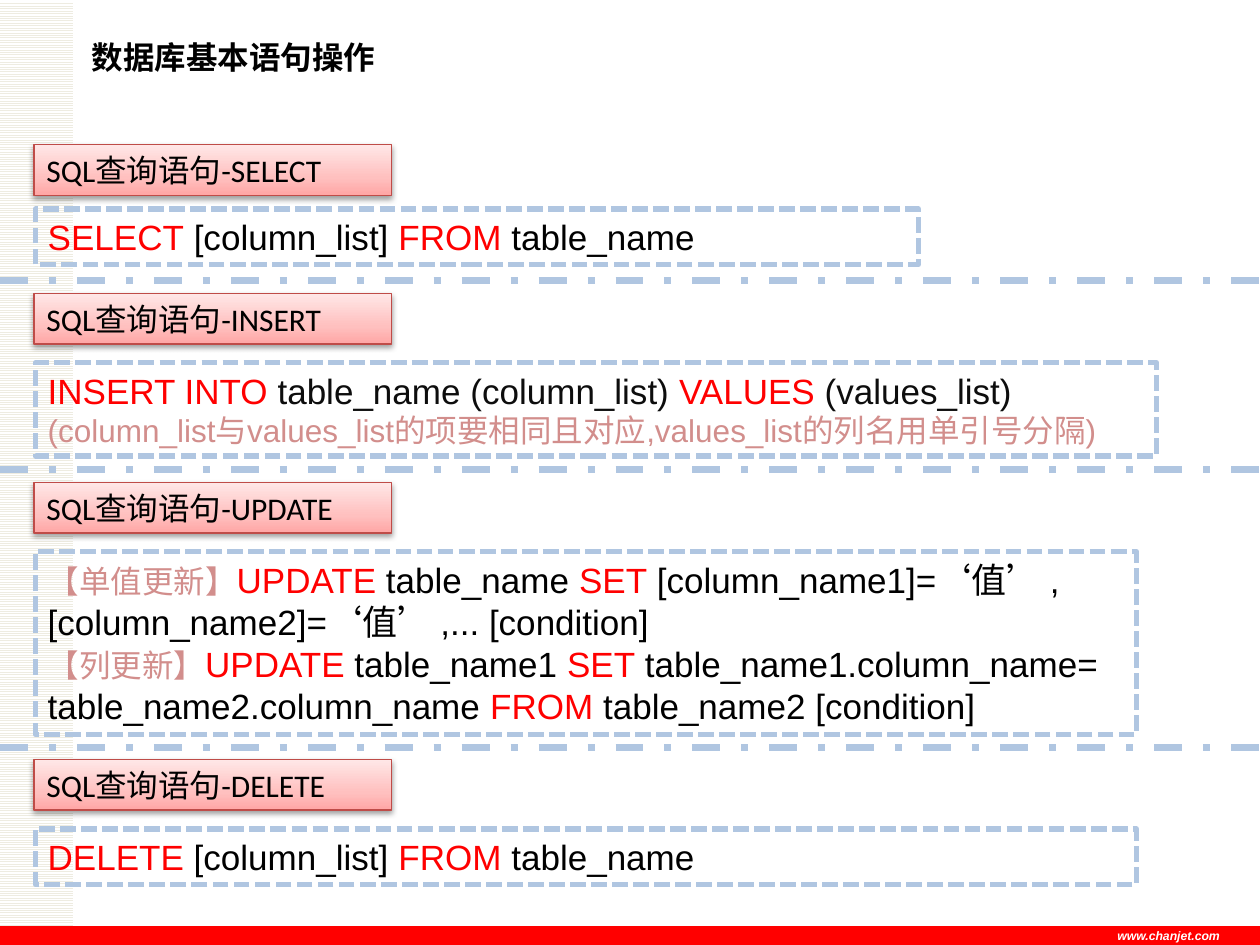
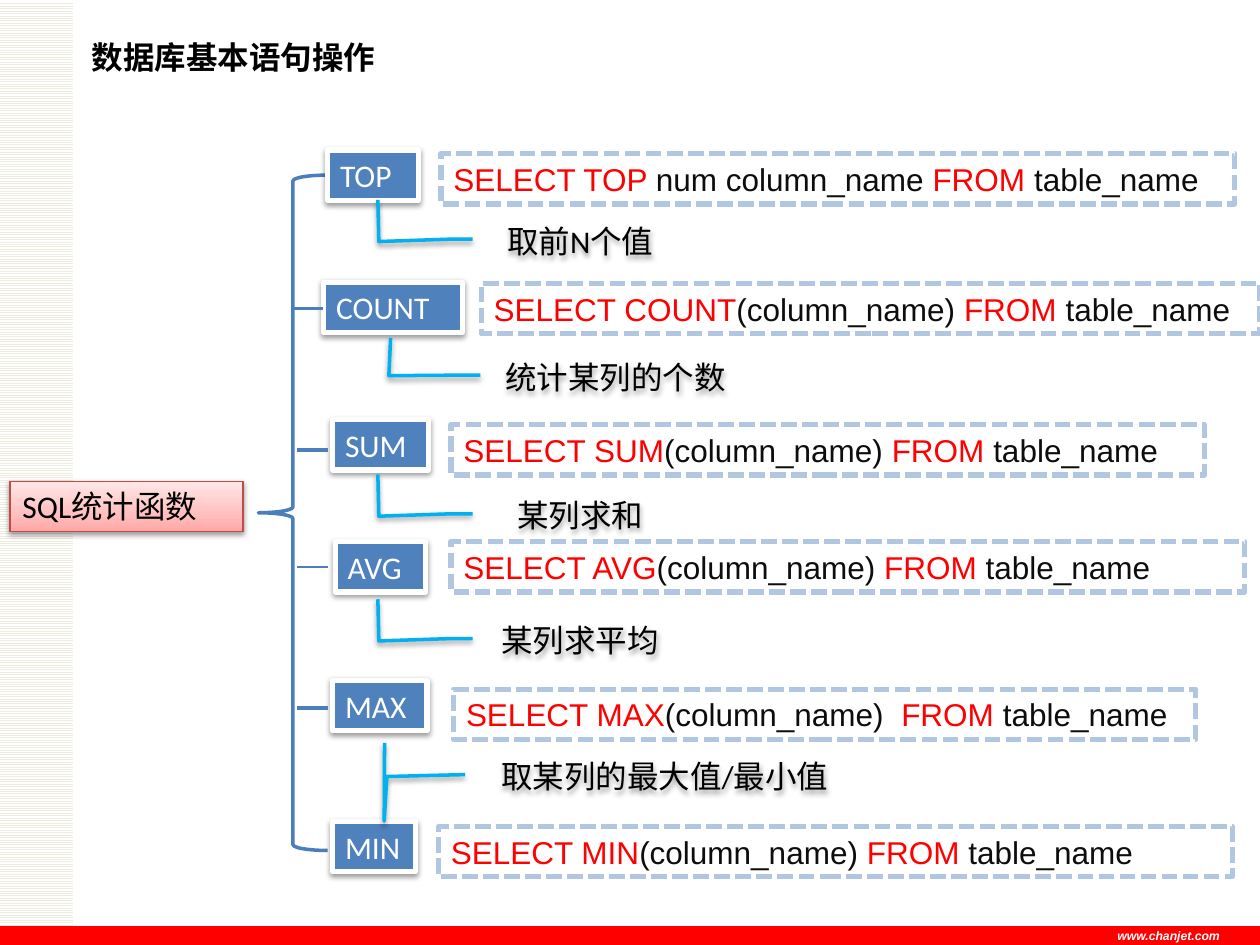
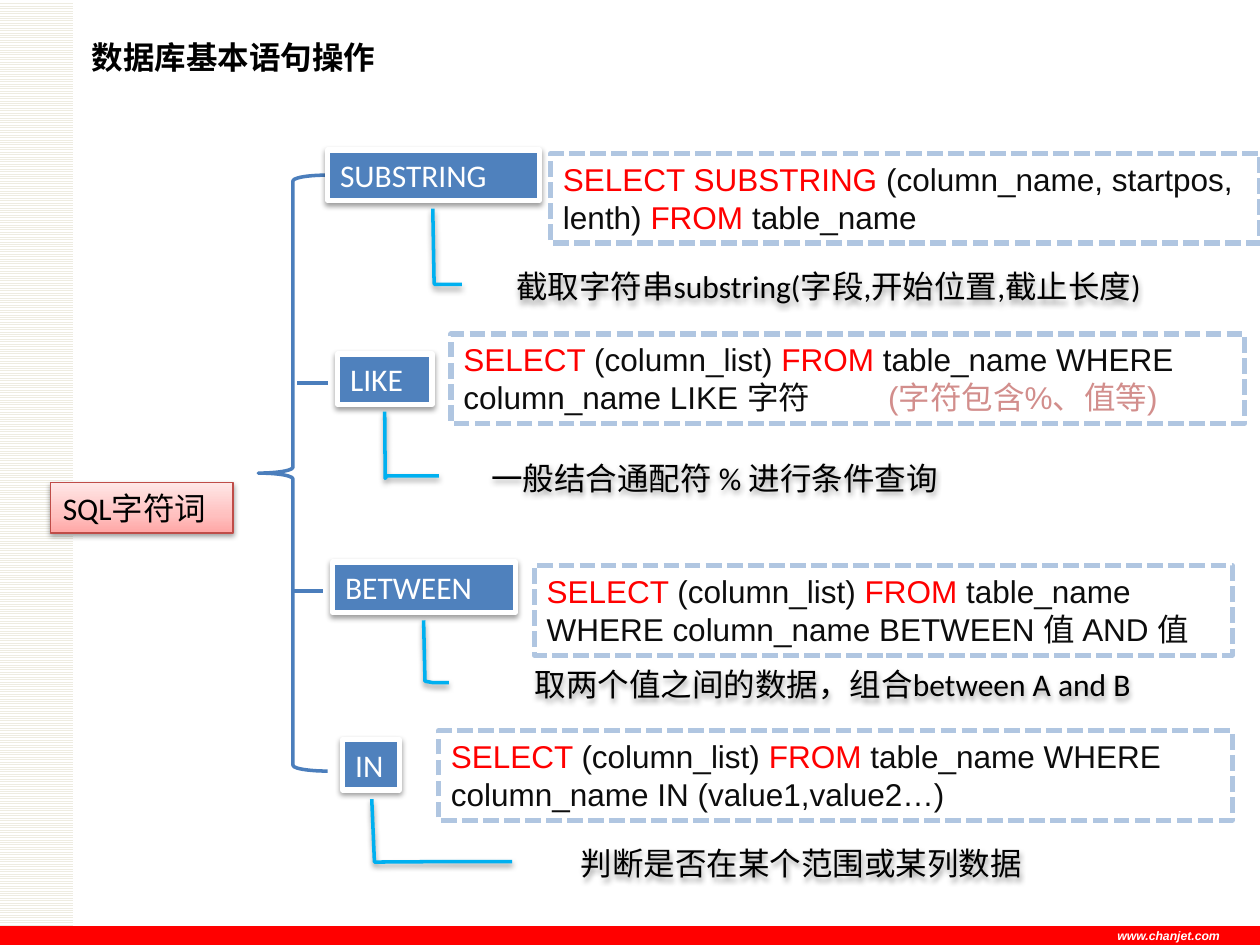
from collections import namedtuple
from copy import deepcopy

from pptx import Presentation
from pptx.dml.color import RGBColor
from pptx.enum.dml import MSO_LINE, MSO_PATTERN
from pptx.enum.shapes import MSO_CONNECTOR, MSO_SHAPE
from pptx.enum.text import MSO_ANCHOR, MSO_AUTO_SIZE, PP_ALIGN
from pptx.oxml import parse_xml
from pptx.oxml.ns import nsdecls, qn
from pptx.util import Inches, Pt

# Colours
BLACK = RGBColor(0x00, 0x00, 0x00)
WHITE = RGBColor(0xFF, 0xFF, 0xFF)
INK = RGBColor(0x0D, 0x0D, 0x0D)
RED = RGBColor(0xFF, 0x00, 0x00)
ROSE = RGBColor(0xD2, 0x8E, 0x8C)
CREAM = RGBColor(0xEE, 0xEC, 0xE1)
PALE_BLUE = RGBColor(0xB0, 0xC6, 0xE1)
BLUE = RGBColor(0x4F, 0x81, 0xBD)
BRACE_BLUE = RGBColor(0x4B, 0x7E, 0xBC)
SKY = RGBColor(0x00, 0xB0, 0xF0)
BRICK = RGBColor(0xBF, 0x4C, 0x48)
PINK_STOPS = [(0, RGBColor(0xFF, 0xA6, 0xA5)), (0.35, RGBColor(0xFF, 0xC0, 0xBF)),
              (1, RGBColor(0xFF, 0xE7, 0xE7))]

# Sizes in inches
BOX_HEIGHT = {1: 0.4, 2: 0.71}
NOTE_HEIGHT = 0.38
BRACE_LEFT, BRACE_TOP, BRACE_WIDTH = 2.05, 1.39, 0.55
TICK_LENGTH = 0.24

TITLE = "数据库基本语句操作"
SITE = "www.chanjet.com"

# Statements: each paragraph is a list of (text, colour)
Section = namedtuple("Section", "heading top box_top box_width box_height paragraphs")
SECTIONS = [
    Section("SQL查询语句-SELECT", 1.15, 1.66, 7.01, 0.44, [
        [("SELECT", RED), (" [column_list] ", BLACK), ("FROM ", RED), ("table_name", BLACK)]]),
    Section("SQL查询语句-INSERT", 2.33, 2.88, 8.9, 0.74, [
        [("INSERT INTO ", RED), ("table_name (column_list) ", INK),
         ("VALUES ", RED), ("(values_list)", INK)],
        [("(column_list与values_list的项要相同且对应,values_list的列名用单引号分隔)", ROSE)]]),
    Section("SQL查询语句-UPDATE", 3.83, 4.38, 8.74, 1.45, [
        [("【单值更新】", ROSE), ("UPDATE", RED), (" table_name ", BLACK), ("SET", RED),
         (" [column_name1]=‘值’ , [column_name2]=‘值’ ,... [condition]", BLACK)],
        [("【列更新】", ROSE), ("UPDATE", RED), (" table_name1 ", BLACK), ("SET", RED),
         (" table_name1.column_name=", BLACK)],
        [("table_name2.column_name ", BLACK), ("FROM", RED),
         (" table_name2 [condition]", BLACK)]]),
    Section("SQL查询语句-DELETE", 6.03, 6.58, 8.74, 0.44, [
        [("DELETE", RED), (" [column_list] ", BLACK), ("FROM", RED), (" table_name", BLACK)]]),
]


def select(keyword, columns, rest="table_name"):
    return [(f"SELECT {keyword}", RED), (columns, INK), ("FROM ", RED), (rest, INK)]


# Trees: keyword and statement are (left, top, width); tick is (left, top, points)
Branch = namedtuple("Branch", "name keyword statement lines runs tick")
Note = namedtuple("Note", "text left top width bends")
NOTE_START = (0.468, -0.044)
SHORT_BENDS = (0.468, -0.147, 0.519, -0.518, -0.354, -0.523)

FUNCTIONS = dict(
    root=("SQL统计函数", 0.08, 3.82, 1.85),
    brace_height=5.36,
    branches=[
        Branch("TOP", (2.6, 1.19, 0.72), (3.5, 1.22, 6.3), 1,
               select("TOP ", "num column_name "), None),
        Branch("COUNT", (2.57, 2.24, 1.1), (3.82, 2.25, 6.18), 1,
               select("COUNT", "(column_name) "), (2.32, 2.45, 2)),
        Branch("SUM", (2.64, 3.33, 0.76), (3.58, 3.37, 5.98), 1,
               select("SUM", "(column_name) "), (2.36, 3.57, 2)),
        Branch("AVG", (2.66, 4.3, 0.72), (3.58, 4.3, 6.3), 1,
               select("AVG", "(column_name) "), (2.36, 4.5, 1.5)),
        Branch("MAX", (2.64, 5.4, 0.75), (3.6, 5.47, 5.89), 1,
               select("MAX", "(column_name)  "), (2.36, 5.62, 2)),
        Branch("MIN", (2.64, 6.52, 0.66), (3.48, 6.56, 6.3), 1,
               select("MIN", "(column_name) "), None),
    ],
    notes=[
        Note("取前N个值", 3.82, 1.72, 1.57, SHORT_BENDS),
        Note("统计某列的个数", 3.9, 2.8, 1.97, (0.468, -0.147, 0.479, -0.413, -0.314, -0.406)),
        Note("某列求和", 3.82, 3.9, 1.57, SHORT_BENDS),
        Note("某列求平均", 3.82, 4.89, 1.57, SHORT_BENDS),
        Note("取某列的最大值/最小值", 3.82, 5.97, 2.91,
             (0.508, -0.258, 1.441, -0.265, -0.194, -0.264)),
    ],
)

LIKE_TAB = 3.37
OPERATORS = dict(
    root=("SQL字符词", 0.4, 3.83, 1.45),
    brace_height=4.73,
    branches=[
        Branch("SUBSTRING", (2.6, 1.19, 1.68), (4.37, 1.22, 5.63), 2,
               select("SUBSTRING ", "(column_name, startpos, lenth) "), None),
        Branch("LIKE", (2.68, 2.81, 0.75), (3.58, 2.65, 6.3), 2,
               select("", "(column_list) ", "table_name WHERE column_name LIKE 字符\t")
               + [("(字符包含%、值等)", ROSE)], (2.36, 3.04, 2)),
        Branch("BETWEEN", (2.64, 4.46, 1.45), (4.24, 4.49, 5.54), 2,
               select("", "(column_list) ", "table_name WHERE column_name BETWEEN 值 AND 值"),
               (2.32, 4.69, 2)),
        Branch("IN", (2.72, 5.87, 0.45), (3.48, 5.8, 6.3), 2,
               select("", "(column_list) ", "table_name WHERE column_name IN (value1,value2…)"),
               None),
    ],
    notes=[
        Note("截取字符串substring(字段,开始位置,截止长度)", 3.9, 2.08, 5.35,
             (0.468, -0.084, 0.439, -0.085, -1.116, -0.087)),
        Note("一般结合通配符 % 进行条件查询", 3.66, 3.6, 4.02,
             (0.468, -0.147, 0.519, -0.15, -0.876, -0.151)),
        Note("取两个值之间的数据，组合between A and B", 3.81, 5.24, 5.6,
             (0.468, -0.067, 0.438, -0.078, -0.836, -0.08)),
        Note("判断是否在某个范围或某列数据", 4.25, 6.66, 4.22,
             (0.468, -0.147, 0.479, -0.303, -0.836, -0.308)),
    ],
)


# Drawing helpers
def add_plain_shape(slide, kind, left, top, width, height, line=None, points=1):
    shape = slide.shapes.add_shape(kind, Inches(left), Inches(top), Inches(width), Inches(height))
    shape.shadow.inherit = False
    shape.fill.background()
    if line is None:
        shape.line.fill.background()
    else:
        shape.line.color.rgb = line
        shape.line.width = Pt(points)
    return shape


def add_shadow(shape):
    shape._element.spPr.find(qn("a:effectLst")).append(parse_xml(
        f'<a:outerShdw {nsdecls("a")} blurRad="40000" dist="20000" dir="5400000" rotWithShape="0">'
        '<a:srgbClr val="000000"><a:alpha val="38000"/></a:srgbClr></a:outerShdw>'))


def write(shape, paragraphs, size, font="Arial", wrap=True, grow=True,
          align=PP_ALIGN.LEFT, anchor=MSO_ANCHOR.TOP, bold=False, italic=False):
    frame = shape.text_frame
    frame.word_wrap = wrap
    frame.auto_size = MSO_AUTO_SIZE.SHAPE_TO_FIT_TEXT if grow else MSO_AUTO_SIZE.NONE
    frame.vertical_anchor = anchor
    for index, runs in enumerate(paragraphs):
        paragraph = frame.add_paragraph() if index else frame.paragraphs[0]
        paragraph.alignment = align
        for text, colour in runs:
            run = paragraph.add_run()
            run.text = text
            run.font.name = font
            run.font.size = Pt(18 if colour == ROSE else size)
            run.font.bold = bold
            run.font.italic = italic
            run.font.color.rgb = colour


def add_heading(slide, text, left, top, width):
    shape = add_plain_shape(slide, MSO_SHAPE.RECTANGLE, left, top, width, 0.4, BRICK, 0.75)
    shape.fill.gradient()
    shape.fill.gradient_angle = 90
    stop_list = shape._element.spPr.find(".//" + qn("a:gsLst"))
    stop_list.append(deepcopy(stop_list[-1]))
    for stop, (position, colour) in zip(shape.fill.gradient_stops, PINK_STOPS):
        stop.position = position
        stop.color.rgb = colour
    add_shadow(shape)
    write(shape, [[(text, BLACK)]], 18, "Calibri")


def add_statement(slide, left, top, width, height, paragraphs, size):
    shape = add_plain_shape(slide, MSO_SHAPE.RECTANGLE, left, top, width, height, PALE_BLUE, 3)
    shape.line.dash_style = MSO_LINE.SQUARE_DOT
    write(shape, paragraphs, size)
    return shape


def add_line(slide, left, top, length, colour, points, dash=None):
    line = slide.shapes.add_connector(MSO_CONNECTOR.STRAIGHT, Inches(left), Inches(top),
                                      Inches(left + length), Inches(top))
    line.line.color.rgb = colour
    line.line.width = Pt(points)
    if dash is not None:
        line.line.dash_style = dash
    line._element.spPr.append(parse_xml(f'<a:effectLst {nsdecls("a")}/>'))


def add_keyword(slide, name, left, top, width):
    shape = add_plain_shape(slide, MSO_SHAPE.RECTANGLE, left, top, width, 0.4, WHITE, 3)
    shape.fill.solid()
    shape.fill.fore_color.rgb = BLUE
    add_shadow(shape)
    write(shape, [[(name, WHITE)]], 18, "Calibri", wrap=False)


def add_note(slide, note):
    shape = add_plain_shape(slide, MSO_SHAPE.LINE_CALLOUT_3_NO_BORDER,
                            note.left, note.top, note.width, NOTE_HEIGHT, SKY, 2)
    for index, value in enumerate(NOTE_START + note.bends):
        shape.adjustments[index] = value
    add_shadow(shape)
    write(shape, [[(note.text, BLACK)]], 18, "Calibri", grow=False,
          align=PP_ALIGN.CENTER, anchor=MSO_ANCHOR.MIDDLE)


# Shared parts
def add_master_bands(presentation, slide):
    stripes = add_plain_shape(slide, MSO_SHAPE.RECTANGLE, 0, 0.01, 0.58, 7.49)
    stripes.fill.patterned()
    stripes.fill.pattern = MSO_PATTERN.LIGHT_HORIZONTAL
    stripes.fill.fore_color.rgb = CREAM
    stripes.fill.back_color.rgb = WHITE
    footer = add_plain_shape(slide, MSO_SHAPE.RECTANGLE, 0, 7.35, 10, 0.16)
    footer.fill.solid()
    footer.fill.fore_color.rgb = RED
    site = slide.shapes.add_textbox(Inches(8.77), Inches(7.32), Inches(1.25), Inches(0.22))
    write(site, [[(SITE, WHITE)]], 7, bold=True, italic=True)
    tree = presentation.slide_master.shapes.element
    for index, shape in enumerate((stripes, footer, site)):
        shape._element.nvSpPr.cNvPr.set("id", str(101 + index))
        tree.insert(2 + index, shape._element)


def add_titled_slide(presentation):
    slide = presentation.slides.add_slide(presentation.slide_layouts[5])
    title = slide.shapes.title
    title.left, title.top = Inches(0.63), Inches(0.25)
    title.width, title.height = Inches(2.49), Inches(0.4)
    write(title, [[(TITLE, BLACK)]], 18, wrap=False, bold=True)
    return slide


# Slides
def build_sections(slide):
    for index, section in enumerate(SECTIONS):
        if index:
            add_line(slide, 0, section.top - 0.1, 10, PALE_BLUE, 4, MSO_LINE.DASH_DOT)
        add_heading(slide, section.heading, 0.27, section.top, 2.84)
        add_statement(slide, 0.28, section.box_top, section.box_width, section.box_height,
                      section.paragraphs, 20)


def build_tree(slide, tree):
    add_heading(slide, *tree["root"])
    add_plain_shape(slide, MSO_SHAPE.LEFT_BRACE, BRACE_LEFT, BRACE_TOP, BRACE_WIDTH,
                    tree["brace_height"], BRACE_BLUE, 2)
    for branch in tree["branches"]:
        statement = add_statement(slide, *branch.statement, BOX_HEIGHT[branch.lines],
                                  [branch.runs], 18)
        if any("\t" in text for text, _ in branch.runs):
            properties = statement.text_frame.paragraphs[0]._p.get_or_add_pPr()
            properties.append(parse_xml(
                f'<a:tabLst {nsdecls("a")}><a:tab pos="{Inches(LIKE_TAB)}" algn="l"/></a:tabLst>'))
        add_keyword(slide, branch.name, *branch.keyword)
        if branch.tick:
            left, top, points = branch.tick
            add_line(slide, left, top, TICK_LENGTH, BRACE_BLUE, points)
    for note in tree["notes"]:
        add_note(slide, note)


def main():
    presentation = Presentation()
    presentation.slide_width = Inches(10)
    presentation.slide_height = Inches(7.5)
    slide = add_titled_slide(presentation)
    add_master_bands(presentation, slide)
    build_sections(slide)
    for tree in (FUNCTIONS, OPERATORS):
        build_tree(add_titled_slide(presentation), tree)
    presentation.save("out.pptx")


if __name__ == "__main__":
    main()
